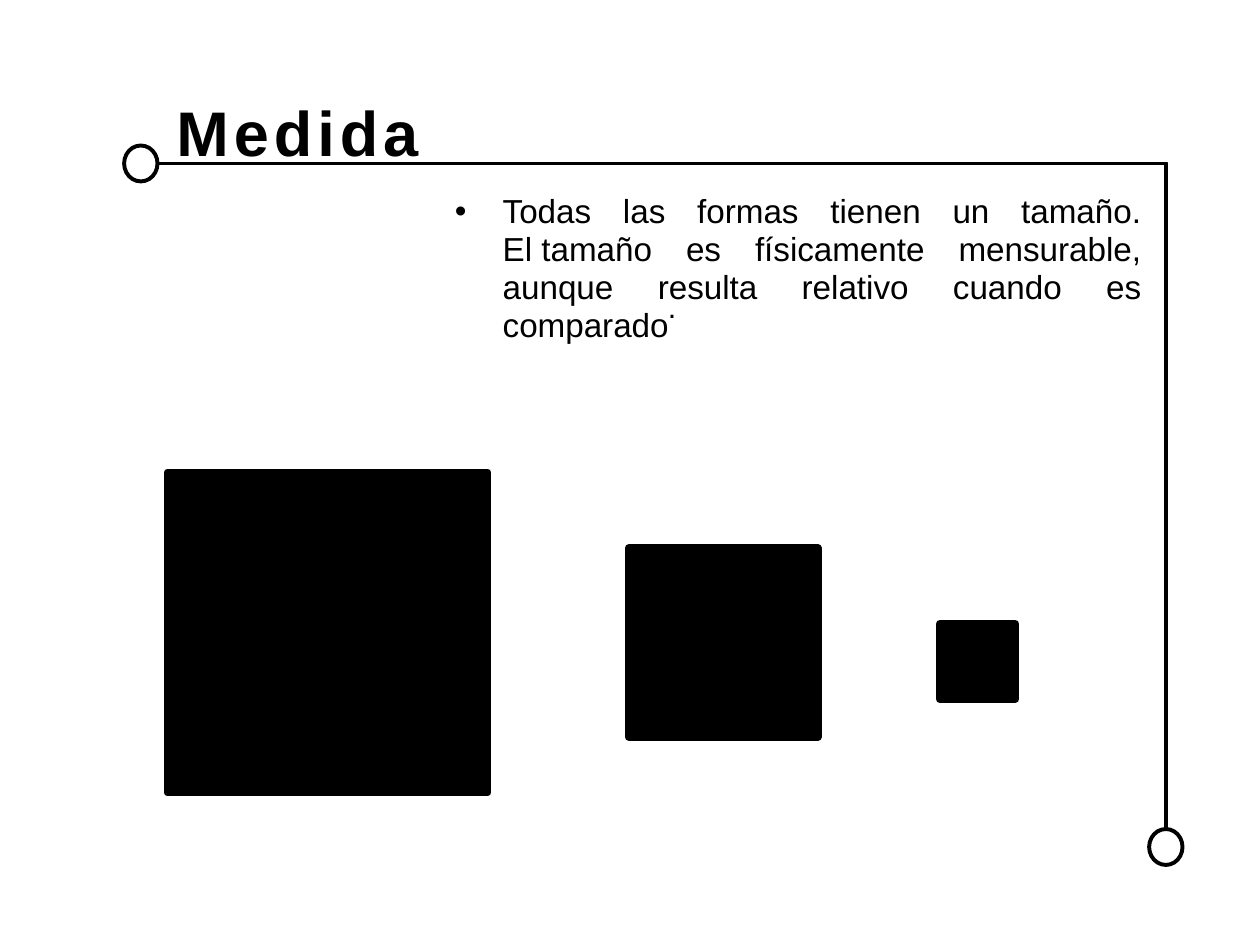
from lxml.etree import SubElement
from pptx import Presentation
from pptx.dml.color import RGBColor
from pptx.enum.shapes import MSO_SHAPE as Shape
from pptx.enum.text import PP_ALIGN as Align
from pptx.oxml.ns import qn
from pptx.util import Inches, Pt

BLACK = RGBColor(0, 0, 0)
FONT = "Arial"
COLS, ROWS = 100, 75
CELL = Inches(0.1)


def grid(*cells):
    return [round(c * CELL) for c in cells]


def style(sp, line, filled=False):
    sp.shadow.inherit = False
    if filled:
        sp.fill.solid()
        sp.fill.fore_color.rgb = BLACK
    else:
        sp.fill.background()
    sp.line.color.rgb = BLACK
    sp.line.width = Pt(line)
    SubElement(sp.line._get_or_add_ln(), qn("a:round"))


def add_text(s, box, text, size, leading, bold=False):
    tf = s.shapes.add_textbox(*grid(*box)).text_frame
    tf.margin_left = tf.margin_top = tf.margin_right = tf.margin_bottom = 0
    tf.word_wrap = True
    p = tf.paragraphs[0]
    p.line_spacing = Pt(leading)
    r = p.add_run()
    r.text = text
    r.font.name, r.font.size, r.font.bold = FONT, Pt(size), bold
    r.font.color.rgb = BLACK
    return p, r


def add_frame(s, box):
    x, y, w, h = box
    t = 0.15
    outline = [(x + w, y), (x + w, y + h), (x + w - t, y + h),
               (x + w - t, y + t), (x, y + t)]
    fb = s.shapes.build_freeform(*grid(x, y))
    fb.add_line_segments([grid(*point) for point in outline], close=True)
    style(fb.convert_to_shape(), 1, filled=True)
    ring_w, ring_h = 2.65, 2.85
    for left, top in ((x - ring_w, y + t / 2 - ring_h / 2),
                      (x + w - t / 2 - ring_w / 2, y + h)):
        ring = s.shapes.add_shape(Shape.OVAL, *grid(left, top, ring_w, ring_h))
        style(ring, 2.25)


def add_title(s, box):
    p, r = add_text(s, box, "Medida", 36, 36.8, bold=True)
    r._r.get_or_add_rPr().set("spc", "290")


def add_statement(s, box):
    x, y, w, h = box
    text = ("Todas las formas tienen un tamaño. El" + chr(160) +
            "tamaño es físicamente mensurable, aunque resulta relativo "
            "cuando es comparado")
    p, r = add_text(s, box, text, 19, 21.6)
    p.alignment = Align.JUSTIFY
    pPr = p._p.get_or_add_pPr()
    indent = Inches(0.38)
    pPr.set("marL", str(indent))
    pPr.set("indent", str(-indent))
    SubElement(pPr, qn("a:buFont"), typeface=FONT)
    SubElement(pPr, qn("a:buChar"), char="•")
    p, r = add_text(s, (x + 16.9, y + 8.8, 1.7, 2), ".", 30, 12.1)
    r._r.get_or_add_rPr().set("baseline", "-26000")


def add_squares(s, box):
    x, y, w, h = box
    for left, top, side in ((0, 0, h), (36.6, 6, 15), (61.3, 12, 6)):
        sq = s.shapes.add_shape(Shape.RECTANGLE,
                                *grid(x + left, y + top, side, side))
        style(sq, 4.5, filled=True)


def main():
    prs = Presentation()
    prs.slide_width, prs.slide_height = grid(COLS, ROWS)
    s = prs.slides.add_slide(prs.slide_layouts[6])
    add_frame(s, (12.5, 12.9, 80.1, 52.9))
    add_squares(s, (13.3, 37.5, 67.3, 25.4))
    add_title(s, (14, 8.3, 24, 5))
    add_statement(s, (36.1, 15.3, 54.5, 12.2))
    prs.save("out.pptx")


if __name__ == "__main__":
    main()
